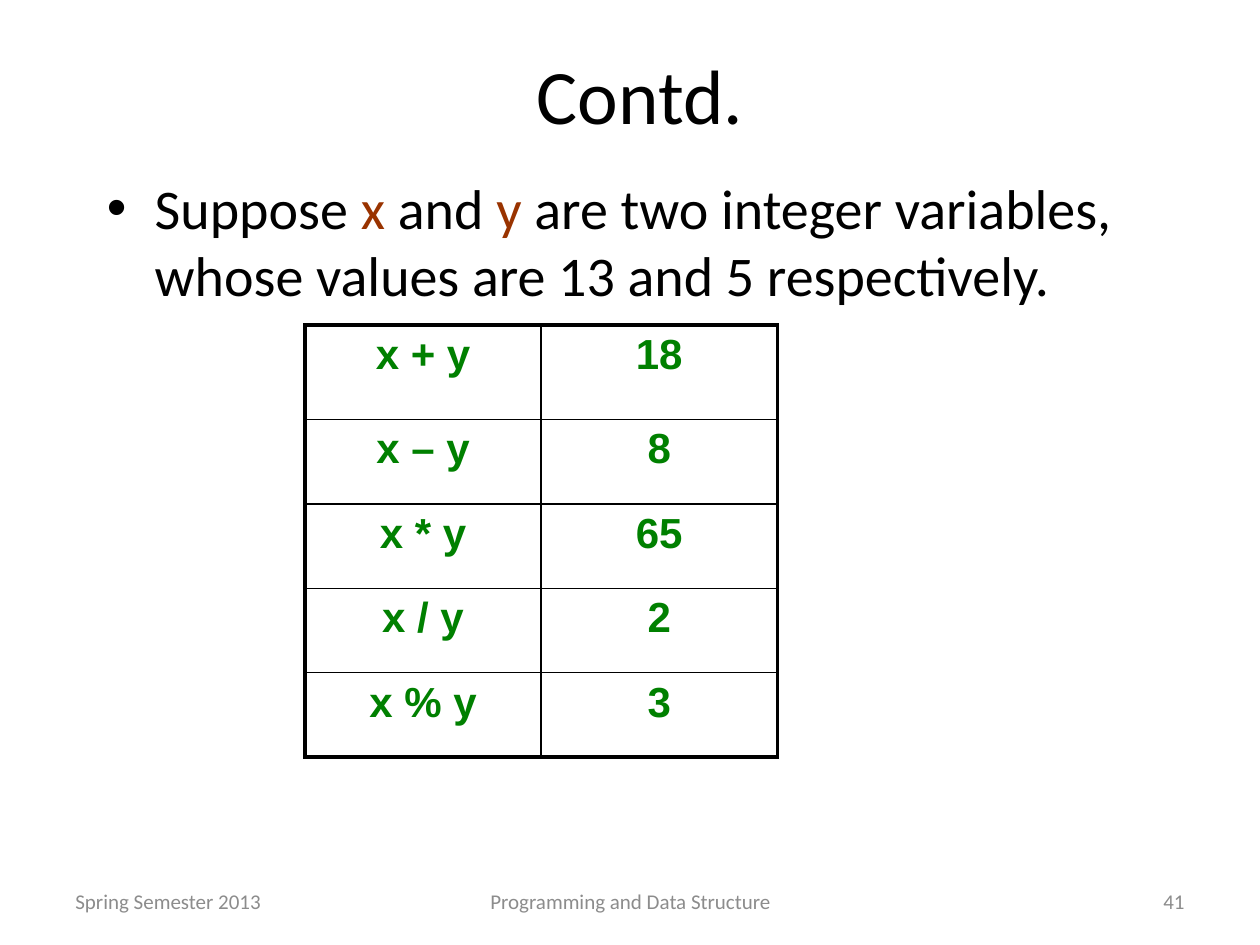
from dataclasses import dataclass

from lxml.etree import SubElement
from pptx import Presentation
from pptx.dml.color import RGBColor
from pptx.enum.text import MSO_ANCHOR as Anchor, PP_ALIGN as Align
from pptx.oxml.ns import qn
from pptx.util import Inches, Pt

COLORS = {"text": "000000", "variable": "993300", "result": "008000", "footer": "8C8C8C"}
OUTER_BORDER, INNER_BORDER = 2.25, 1


@dataclass
class Box:
    left: float
    top: float
    width: float
    height: float


@dataclass
class Footer:
    text: str
    box: Box
    align: Align


@dataclass
class Operation:
    expression: str
    value: str
    height: float = 0.67


FOOTERS = [
    Footer("Spring Semester 2013", Box(0.5, 6.95, 2.33, 0.4), Align.LEFT),
    Footer("Programming and Data Structure", Box(3.42, 6.95, 3.17, 0.4), Align.CENTER),
    Footer("41", Box(7.17, 6.95, 2.33, 0.4), Align.RIGHT),
]
OPERATIONS = [
    Operation("x + y", "18", 0.75),
    Operation("x – y", "8"),
    Operation("x * y", "65"),
    Operation("x / y", "2"),
    Operation("x % y", "3"),
]


def write(frame, *runs: tuple[str, str], size: float, font: str = "Calibri",
          bold: bool = False, align: Align = Align.LEFT, anchor: Anchor = Anchor.TOP,
          spaced: bool = False, bullet: bool = False) -> None:
    """Write (text, colour name) runs as the frame's only paragraph."""
    frame.word_wrap = True
    frame.vertical_anchor = anchor
    paragraph = frame.paragraphs[0]
    paragraph.alignment = align
    properties = paragraph._p.get_or_add_pPr()
    if spaced:
        before = SubElement(properties, qn("a:spcBef"))
        SubElement(before, qn("a:spcPct"), val="20000")
    if bullet:
        indent = Inches(0.38)
        properties.set("marL", str(indent))
        properties.set("indent", str(-indent))
        SubElement(properties, qn("a:buFont"), typeface="Arial")
        SubElement(properties, qn("a:buChar"), char="•")
    for text, color in runs:
        run = paragraph.add_run()
        run.text = text
        run.font.name, run.font.size, run.font.bold = font, Pt(size), bold
        run.font.color.rgb = RGBColor.from_string(COLORS[color])


def add_frame(slide, box: Box):
    return slide.shapes.add_textbox(Inches(box.left), Inches(box.top),
                                    Inches(box.width), Inches(box.height)).text_frame


def set_borders(cell, left: float, right: float, top: float, bottom: float) -> None:
    properties = cell._tc.get_or_add_tcPr()
    for side, width in zip("LRTB", (left, right, top, bottom)):
        line = SubElement(properties, qn(f"a:ln{side}"), w=str(Pt(width)))
        fill = SubElement(line, qn("a:solidFill"))
        SubElement(fill, qn("a:srgbClr"), val=COLORS["text"])


def add_operations(slide, operations: list[Operation], box: Box) -> None:
    table = slide.shapes.add_table(len(operations), 2, Inches(box.left), Inches(box.top),
                                   Inches(box.width), Inches(box.height)).table
    table.first_row = table.horz_banding = False

    def weight(is_edge: bool) -> float:
        return OUTER_BORDER if is_edge else INNER_BORDER

    for row, operation in enumerate(operations):
        table.rows[row].height = Inches(operation.height)
        for column, text in enumerate((operation.expression, operation.value)):
            cell = table.cell(row, column)
            set_borders(cell, weight(column == 0), weight(column == 1),
                        weight(row == 0), weight(row == len(operations) - 1))
            cell.fill.background()
            write(cell.text_frame, (text, "result"), size=24, font="Arial", bold=True,
                  align=Align.CENTER, spaced=True)


def main() -> None:
    deck = Presentation()
    deck.slide_width, deck.slide_height = Inches(10), Inches(7.5)
    slide = deck.slides.add_slide(deck.slide_layouts[6])

    # Title and statement
    write(add_frame(slide, Box(0.83, 0.33, 8.5, 0.83)), ("Contd.", "text"), size=44,
          align=Align.CENTER, anchor=Anchor.MIDDLE)
    write(add_frame(slide, Box(0.75, 1.33, 8.5, 5.5)),
          ("Suppose ", "text"), ("x", "variable"), (" and ", "text"), ("y", "variable"),
          (" are two integer variables, whose values are 13 and 5 respectively.", "text"),
          size=32, spaced=True, bullet=True)

    # Results of the integer operations
    add_operations(slide, OPERATIONS, Box(2.42, 2.58, 3.75, 3.42))

    # Footer line
    for footer in FOOTERS:
        write(add_frame(slide, footer.box), (footer.text, "footer"), size=12,
              align=footer.align, anchor=Anchor.MIDDLE)

    deck.save("out.pptx")


if __name__ == "__main__":
    main()
